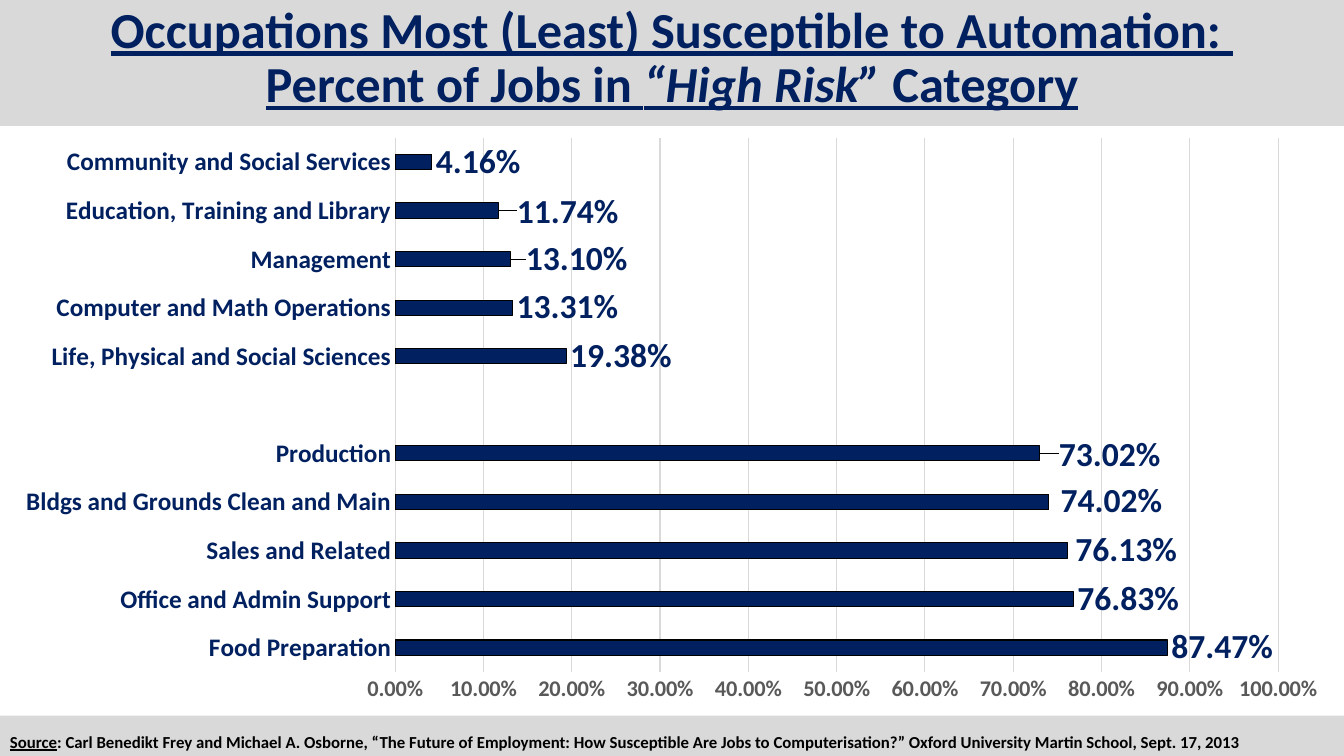
from lxml.etree import SubElement
from pptx import Presentation
from pptx.chart.data import CategoryChartData
from pptx.dml.color import RGBColor
from pptx.enum.chart import XL_CHART_TYPE, XL_LABEL_POSITION, XL_TICK_MARK
from pptx.enum.text import MSO_ANCHOR, PP_ALIGN
from pptx.oxml import parse_xml
from pptx.oxml.ns import nsdecls, qn
from pptx.util import Inches, Pt

COLORS = {"navy": "002060", "grid": "D9D9D9", "gray": "595959",
          "black": "000000", "white": "FFFFFF"}
FACE = "Calibri"
JOBS = [
    ("Food Preparation", 0.8747),
    ("Office and Admin Support", 0.7683),
    ("Sales and Related", 0.7613),
    ("Bldgs and Grounds Clean and Main", 0.7402),
    ("Production", 0.7302),
    ("", None),
    ("Life, Physical and Social Sciences", 0.1938),
    ("Computer and Math Operations", 0.1331),
    ("Management", 0.131),
    ("Education, Training and Library", 0.1174),
    ("Community and Social Services", 0.0416),
]
SHIFTS = {2: (0.04, 0), 3: (0.08, 0), 4: (0.15, 0.02), 8: (0.11, 0), 9: (0.14, 0.02)}
PLOT = {"x": 0.294, "y": 0.02, "w": 0.657, "h": 0.906}


def color(name):
    return RGBColor.from_string(COLORS[name])


def style(font, size, name):
    font.name = FACE
    font.size = Pt(size)
    font.bold = True
    font.color.rgb = color(name)


def stroke(line, name):
    line.color.rgb = color(name)
    line.width = Pt(0.75)


def add_box(slide, left, top, width, height):
    return slide.shapes.add_textbox(
        Inches(left), Inches(top), Inches(width), Inches(height)).text_frame


def add_run(para, text, under=True, slant=False):
    run = para.add_run()
    run.text = text
    run.font.underline = under
    run.font.italic = slant


def add_title(slide, left, top, width, height):
    frame = add_box(slide, left, top, width, height)
    frame.word_wrap = True
    frame.vertical_anchor = MSO_ANCHOR.TOP
    para = frame.paragraphs[0]
    para.alignment = PP_ALIGN.CENTER
    para.line_spacing = 0.9
    style(para.font, 36, "navy")
    add_run(para, "Occupations Most (Least) Susceptible to Automation: ")
    para.add_line_break()
    add_run(para, "Percent of Jobs in ")
    add_run(para, "“High Risk” ", slant=True)
    add_run(para, "Category")


def add_source(slide, left, top, width, height):
    frame = add_box(slide, left, top, width, height)
    frame.word_wrap = False
    para = frame.paragraphs[0]
    style(para.font, 12, "black")
    add_run(para, "Source")
    add_run(para, ": Carl Benedikt Frey and Michael A. Osborne, “The Future of "
            "Employment: How Susceptible Are Jobs to Computerisation?” Oxford "
            "University Martin School, Sept. 17, 2013", under=False)


def set_layout(node, parts):
    for old in node.findall(qn("c:layout")):
        node.remove(old)
    layout = parse_xml(f"<c:layout {nsdecls('c')}/>")
    manual = SubElement(layout, qn("c:manualLayout"))
    for tag, value in parts:
        SubElement(manual, qn(f"c:{tag}")).set("val", str(value))
    return layout


def set_labels(series, width, height):
    labels = series.data_labels
    labels.show_value = True
    labels.number_format = "0.00%"
    labels.number_format_is_linked = False
    labels.position = XL_LABEL_POSITION.OUTSIDE_END
    style(labels.font, 24, "navy")
    for index, (right, down) in SHIFTS.items():
        label = series.points[index].data_label
        label.position = XL_LABEL_POSITION.OUTSIDE_END
        style(label.font, 24, "navy")
        node = labels._element.find(f"{qn('c:dLbl')}[{qn('c:idx')}][last()]")
        for item in labels._element.findall(qn("c:dLbl")):
            if item.find(qn("c:idx")).get("val") == str(index):
                node = item
        parts = [("x", round(right / width, 4)), ("y", round(down / height, 4))]
        node.find(qn("c:idx")).addnext(set_layout(node, parts))


def set_axes(chart):
    jobs, rates = chart.category_axis, chart.value_axis
    for axis in (jobs, rates):
        axis.major_tick_mark = axis.minor_tick_mark = XL_TICK_MARK.NONE
    style(jobs.tick_labels.font, 18, "navy")
    stroke(jobs.format.line, "grid")
    style(rates.tick_labels.font, 16, "gray")
    rates.tick_labels.number_format = "0.00%"
    rates.tick_labels.number_format_is_linked = False
    rates.minimum_scale, rates.maximum_scale, rates.major_unit = 0, 1, 0.1
    rates.format.line.fill.background()
    rates.has_major_gridlines = True
    stroke(rates.major_gridlines.format.line, "grid")


def add_bars(slide, left, top, width, height):
    data = CategoryChartData(number_format="0.00%")
    data.categories = [job for job, rate in JOBS]
    data.add_series("Series 1", [rate for job, rate in JOBS])
    chart = slide.shapes.add_chart(
        XL_CHART_TYPE.BAR_CLUSTERED, Inches(left), Inches(top),
        Inches(width), Inches(height), data).chart
    chart.has_legend = False
    chart.has_title = False
    style(chart.font, 16, "black")
    plot = chart.plots[0]
    plot.gap_width = 219
    plot.vary_by_categories = False
    series = plot.series[0]
    series.format.fill.solid()
    series.format.fill.fore_color.rgb = color("navy")
    stroke(series.format.line, "black")
    set_axes(chart)
    set_labels(series, width, height)
    body = chart._chartSpace.find(qn("c:chart"))
    area = body.find(qn("c:plotArea"))
    modes = [("layoutTarget", "inner"), ("xMode", "edge"), ("yMode", "edge")]
    area.insert(0, set_layout(area, modes + list(PLOT.items())))
    body.addnext(parse_xml(
        f"<c:spPr {nsdecls('c', 'a')}><a:solidFill><a:srgbClr "
        f"val=\"{COLORS['white']}\"/></a:solidFill><a:ln><a:noFill/></a:ln></c:spPr>"))


def main():
    deck = Presentation()
    deck.slide_width, deck.slide_height = Inches(13.33), Inches(7.5)
    slide = deck.slides.add_slide(deck.slide_layouts[6])
    slide.background.fill.solid()
    slide.background.fill.fore_color.rgb = color("grid")
    add_title(slide, 0, 0, 13.33, 1.14)
    add_bars(slide, 0, 1.25, 13.33, 5.85)
    add_source(slide, 0, 7.21, 12.57, 0.3)
    deck.save("out.pptx")


if __name__ == "__main__":
    main()
